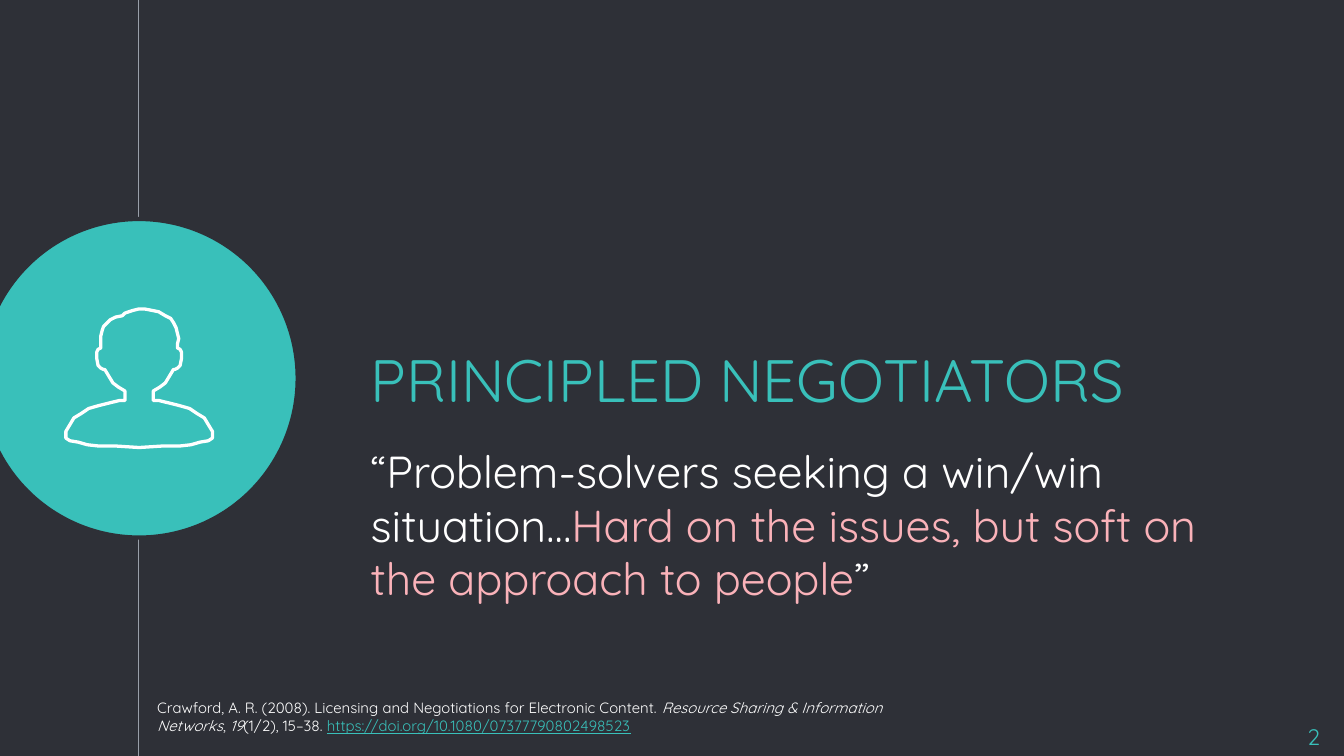
"""Build the slide on principled negotiators."""
from typing import NamedTuple

from lxml.etree import SubElement
from pptx import Presentation
from pptx.dml.color import RGBColor as Rgb
from pptx.enum.shapes import MSO_CONNECTOR as Connector, MSO_SHAPE as Preset
from pptx.enum.text import MSO_ANCHOR as Anchor, PP_ALIGN as Align
from pptx.oxml.ns import qn
from pptx.util import Pt

PX = 914400 // 200
FONT = "Quicksand"
COLORS = {
    "ground": "2E3037",
    "rail": "999FA9",
    "teal": "39C0BA",
    "white": "FFFFFF",
    "pink": "FAB2B9",
}
HAIR = [
    (150, 510), (150, 500), (152, 492), (154, 486), (158, 482), (164, 476),
    (172, 472), (182, 470), (186, 466), (192, 464), (198, 462), (206, 460),
    (216, 460), (226, 462), (236, 464), (246, 470), (254, 474), (258, 480),
    (262, 488), (264, 496), (266, 504), (264, 512),
]
LEFT_BODY = [
    (150, 518), (146, 520), (144, 524), (144, 534), (146, 544), (150, 548),
    (154, 550), (156, 550), (162, 560), (168, 570), (176, 576), (186, 582),
    (186, 596), (178, 596), (162, 600), (146, 604), (132, 608), (120, 616),
    (110, 622), (104, 632), (98, 642), (98, 652), (104, 656), (116, 658),
    (130, 662), (148, 664), (174, 664), (206, 666),
]
BODY_AXIS = 207


class Frame(NamedTuple):
    left: int
    top: int
    width: int
    height: int

    def emu(self) -> list[int]:
        return [length * PX for length in self]


class Span(NamedTuple):
    text: str
    color: str = "white"
    italic: bool = False
    underline: bool = False


class Block(NamedTuple):
    frame: Frame
    size: int
    spans: list[Span]
    inset: int = 20
    space_before: int = 0
    align: Align = Align.LEFT
    anchor: Anchor = Anchor.TOP


TITLE = Block(
    Frame(532, 436, 1318, 254), 32, [Span("PRINCIPLED NEGOTIATORS", "teal")],
    anchor=Anchor.MIDDLE,
)
BLOCKS = [
    Block(Frame(532, 640, 1318, 172), 24, [
        Span("“Problem-solvers seeking a win/win situation…"),
        Span("Hard on the issues, but soft on the approach to people", "pink"),
        Span("”"),
    ], space_before=6),
    Block(Frame(224, 1030, 1128, 122), 8, [
        Span("Crawford, A. R. (2008). Licensing and Negotiations for Electronic Content. "),
        Span("Resource Sharing & Information Networks", italic=True),
        Span(", "),
        Span("19", italic=True),
        Span("(1/2), 15–38. "),
        Span("https://doi.org/10.1080/07377790802498523", "teal", underline=True),
    ], inset=10),
    Block(Frame(1864, 1056, 120, 68), 12, [Span("2", "teal")], align=Align.RIGHT),
]


def rgb(name: str) -> Rgb:
    return Rgb.from_string(COLORS[name])


def set_line(shape, color: str, width: float) -> None:
    shape.line.color.rgb = rgb(color)
    shape.line.width = Pt(width)


def write_block(box, block: Block) -> None:
    box.left, box.top, box.width, box.height = block.frame.emu()
    frame = box.text_frame
    frame.word_wrap = True
    frame.vertical_anchor = block.anchor
    frame.margin_left = frame.margin_right = block.inset * PX
    frame.margin_top = frame.margin_bottom = block.inset * PX
    paragraph = frame.paragraphs[0]
    paragraph.alignment = block.align
    paragraph.line_spacing = 1.0
    paragraph.space_before = Pt(block.space_before)
    paragraph.font.name = FONT
    paragraph.font.size = Pt(block.size)
    for span in block.spans:
        run = paragraph.add_run()
        run.text = span.text
        run.font.name = FONT
        run.font.size = Pt(block.size)
        run.font.color.rgb = rgb(span.color)
        run.font.italic = span.italic
        run.font.underline = span.underline


def draw_rail(page, x: int, height: int) -> None:
    rail = page.shapes.add_connector(Connector.STRAIGHT, x * PX, 0, x * PX, height * PX)
    set_line(rail, "rail", 0.75)
    SubElement(rail._element.spPr, qn("a:effectLst"))


def draw_disc(page, frame: Frame) -> None:
    disc = page.shapes.add_shape(Preset.OVAL, *frame.emu())
    disc.shadow.inherit = False
    disc.fill.solid()
    disc.fill.fore_color.rgb = rgb("teal")
    set_line(disc, "ground", 2.25)


def draw_person(page) -> None:
    right_body = [(2 * BODY_AXIS - x, y) for x, y in LEFT_BODY]
    outline = HAIR + right_body + LEFT_BODY[::-1]
    builder = page.shapes.build_freeform(*outline[0], scale=PX)
    builder.add_line_segments(outline[1:], close=True)
    person = builder.convert_to_shape()
    person.shadow.inherit = False
    person.fill.background()
    set_line(person, "white", 1.75)


def main() -> None:
    deck = Presentation()
    deck.slide_width, deck.slide_height = 2000 * PX, 1125 * PX
    page = deck.slides.add_slide(deck.slide_layouts[5])
    page.background.fill.solid()
    page.background.fill.fore_color.rgb = rgb("ground")
    draw_rail(page, 206, 1125)
    draw_disc(page, Frame(-29, 326, 472, 474))
    write_block(page.shapes.title, TITLE)
    for block in BLOCKS:
        write_block(page.shapes.add_textbox(*block.frame.emu()), block)
    draw_person(page)
    deck.save("out.pptx")


if __name__ == "__main__":
    main()
